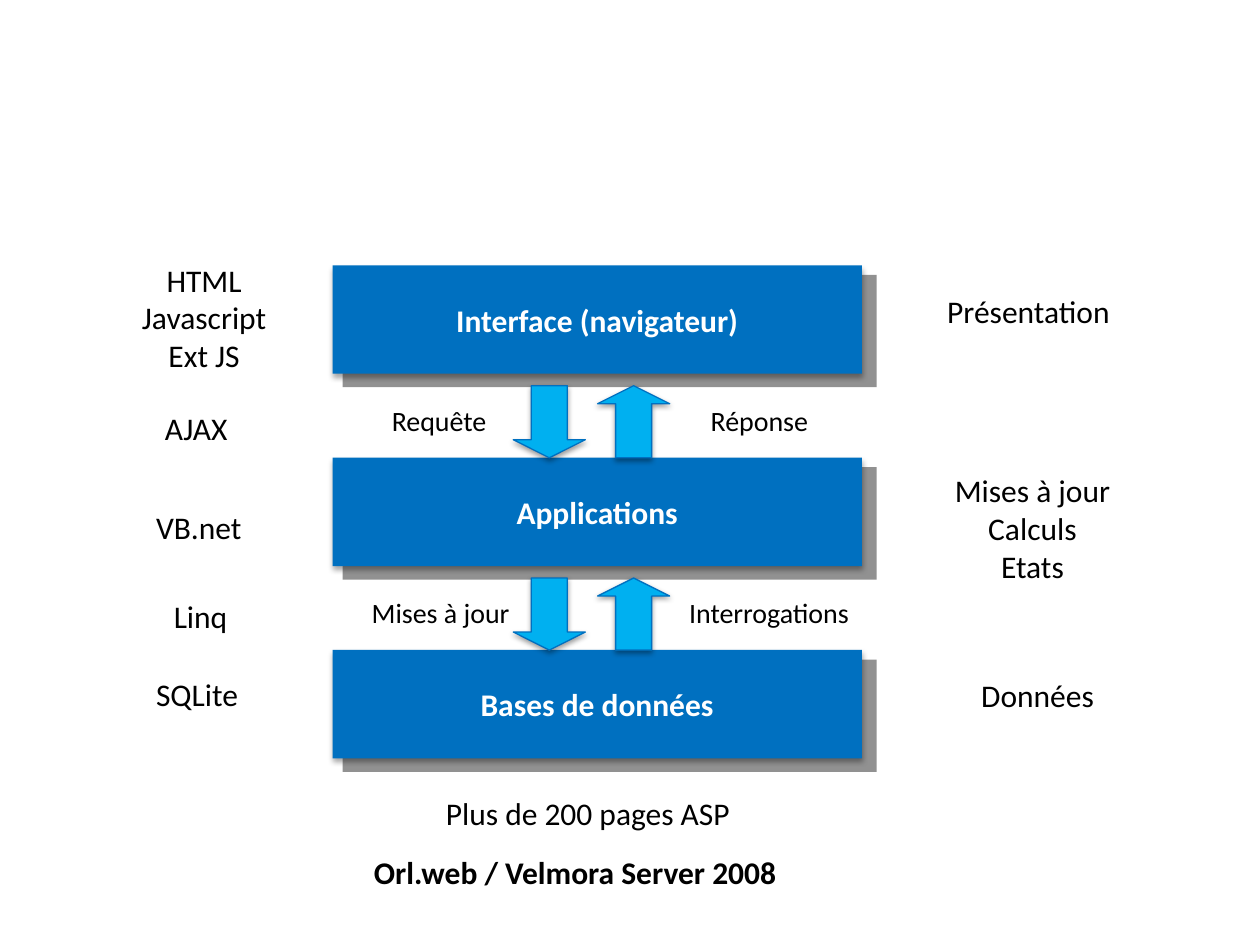
from dataclasses import dataclass

from lxml.etree import SubElement
from pptx import Presentation
from pptx.dml.color import RGBColor as RGB
from pptx.enum.shapes import MSO_SHAPE as Preset
from pptx.enum.text import MSO_ANCHOR as Anchor, MSO_AUTO_SIZE as AutoSize, PP_ALIGN as Align
from pptx.oxml.ns import qn
from pptx.util import Pt


@dataclass(frozen=True)
class Theme:
    font: str = "Calibri"
    body: int = 18
    flow: int = 16
    layer: RGB = RGB(0x00, 0x70, 0xC0)
    plate: RGB = RGB(0x91, 0x91, 0x91)
    arrow: RGB = RGB(0x00, 0xB0, 0xF0)
    ink: RGB = RGB(0, 0, 0)
    paper: RGB = RGB(255, 255, 255)


@dataclass(frozen=True)
class Frame:
    left: float
    top: float
    width: float
    height: float

    def emu(self) -> tuple:
        return Pt(self.left), Pt(self.top), Pt(self.width), Pt(self.height)


@dataclass(frozen=True)
class Label:
    text: str
    frame: Frame
    align: Align = Align.LEFT
    size: int = 18
    bold: bool = False
    wrap: bool = False
    inset: bool = True


@dataclass(frozen=True)
class Flow:
    request: Label
    answer: Label


THEME = Theme()
LAYER_TOP, LAYER_PITCH = 151.6, 109.9
ARROW_TOP, ARROW_SIDE = 220.4, 41.2
DOWN_LEFT, UP_LEFT = 293.3, 341.5
FLOW_TOP = 230.4

LAYERS = ("Interface (navigateur)", "Applications", "Bases de données")


def flow_label(text: str, left: float, width: float, row: int) -> Label:
    frame = Frame(left, FLOW_TOP + row * LAYER_PITCH, width, 19.4)
    return Label(text, frame, size=THEME.flow, inset=False)


FLOWS = (
    Flow(flow_label("Requête", 223.9, 54.7, 0), flow_label("Réponse", 406.1, 56.2, 0)),
    Flow(flow_label("Mises à jour", 212.4, 79.9, 1), flow_label("Interrogations", 393.8, 92.9, 1)),
)

LABELS = (
    Label("HTML\nJavascript\vExt JS", Frame(68.4, 145.4, 96.5, 72.7), Align.CENTER),
    Label("AJAX", Frame(87.1, 230.4, 59.8, 29.1)),
    Label("VB.net", Frame(82.1, 286.6, 69.1, 29.1)),
    Label("Linq", Frame(92.2, 337.7, 49, 29.1)),
    Label("SQLite", Frame(82.1, 382.3, 69.8, 29.1)),
    Label("Présentation", Frame(534.2, 163.4, 108.7, 29.1)),
    Label("Mises à jour\nCalculs\nEtats", Frame(527, 265.7, 126, 72.7), Align.CENTER, wrap=True),
    Label("Données", Frame(529.9, 383, 126, 29.1), Align.CENTER, wrap=True),
    Label("Plus de 200 pages ASP", Frame(247.7, 450, 178.6, 29.1)),
    Label("Orl.web / Velmora Server 2008", Frame(206.6, 483.8, 283.7, 29.1), bold=True),
)


def apply(target, values: dict) -> None:
    for name, value in values.items():
        setattr(target, name, value)


def write(frame, text: str, align: Align, size: int, color: RGB, bold: bool) -> None:
    frame.text = text
    for paragraph in frame.paragraphs:
        paragraph.alignment = align
        for run in paragraph.runs:
            apply(run.font, {"name": THEME.font, "size": Pt(size), "bold": bold})
            run.font.color.rgb = color


def draw_block(shapes, preset: Preset, frame: Frame, fill: RGB):
    block = shapes.add_shape(preset, *frame.emu())
    block.shadow.inherit = False
    block.fill.solid()
    block.fill.fore_color.rgb = fill
    block.line.fill.background()
    return block


def cast_shadow(block, distance: float, opacity: int) -> None:
    effects = block._element.spPr.find(qn("a:effectLst"))
    shadow = SubElement(effects, qn("a:outerShdw"), blurRad=str(Pt(3.1)), dist=str(Pt(distance)),
                        dir="5400000", rotWithShape="0")
    color = SubElement(shadow, qn("a:srgbClr"), val=str(THEME.ink))
    SubElement(color, qn("a:alpha"), val=str(opacity * 1000))


def draw_layer(shapes, title: str, row: int) -> None:
    top = LAYER_TOP + row * LAYER_PITCH
    draw_block(shapes, Preset.RECTANGLE, Frame(195.8, top + 5.5, 305.2, 64.2), THEME.plate)
    layer = draw_block(shapes, Preset.RECTANGLE, Frame(190.1, top, 302.4, 62), THEME.layer)
    cast_shadow(layer, 1.8, 35)
    layer.text_frame.vertical_anchor = Anchor.MIDDLE
    write(layer.text_frame, title, Align.CENTER, THEME.body, THEME.paper, True)


def draw_arrow(shapes, preset: Preset, left: float, row: int) -> None:
    frame = Frame(left, ARROW_TOP + row * LAYER_PITCH, ARROW_SIDE, ARROW_SIDE)
    arrow = draw_block(shapes, preset, frame, THEME.arrow)
    arrow.adjustments[0], arrow.adjustments[1] = 0.5, 0.25
    arrow.line.color.rgb = THEME.layer
    arrow.line.width = Pt(0.75)
    cast_shadow(arrow, 1.6, 38)


def draw_label(shapes, label: Label) -> None:
    frame = shapes.add_textbox(*label.frame.emu()).text_frame
    apply(frame, {"word_wrap": label.wrap, "auto_size": AutoSize.SHAPE_TO_FIT_TEXT})
    if not label.inset:
        sides = ("left", "top", "right", "bottom")
        apply(frame, {f"margin_{side}": Pt(0) for side in sides})
    write(frame, label.text, label.align, label.size, THEME.ink, label.bold)


def main() -> None:
    deck = Presentation()
    apply(deck, {"slide_width": Pt(720), "slide_height": Pt(540)})
    shapes = deck.slides.add_slide(deck.slide_layouts[6]).shapes
    for row, title in enumerate(LAYERS):
        draw_layer(shapes, title, row)
    for row, flow in enumerate(FLOWS):
        draw_arrow(shapes, Preset.UP_ARROW, UP_LEFT, row)
        draw_arrow(shapes, Preset.DOWN_ARROW, DOWN_LEFT, row)
        draw_label(shapes, flow.answer)
        draw_label(shapes, flow.request)
    for label in LABELS:
        draw_label(shapes, label)
    deck.save("out.pptx")


if __name__ == "__main__":
    main()
